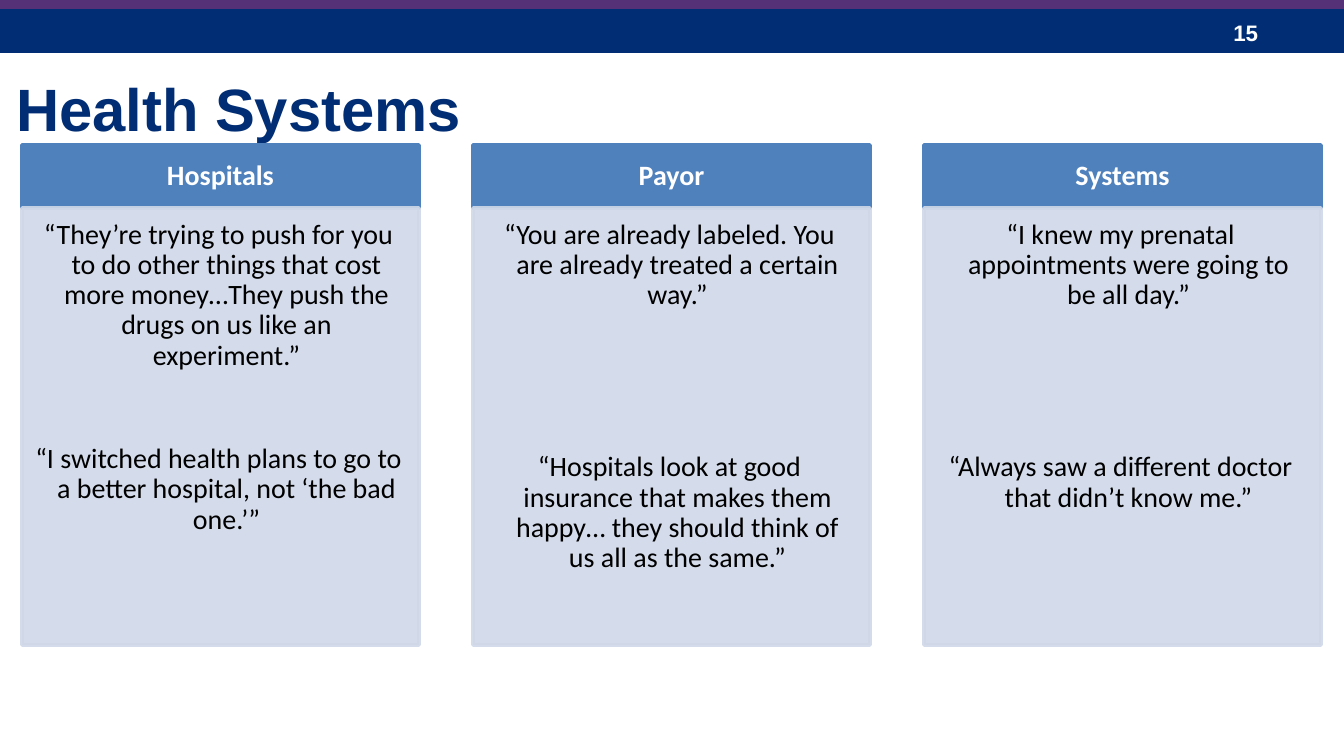
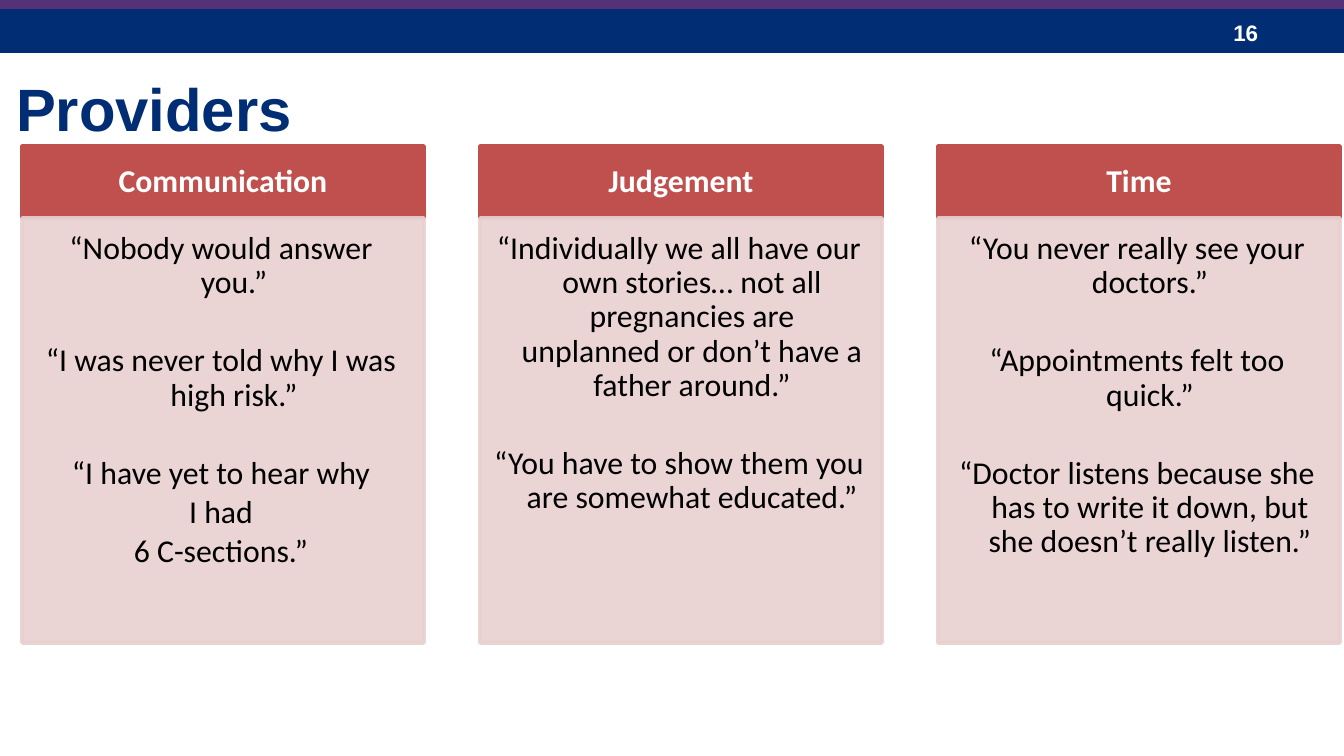
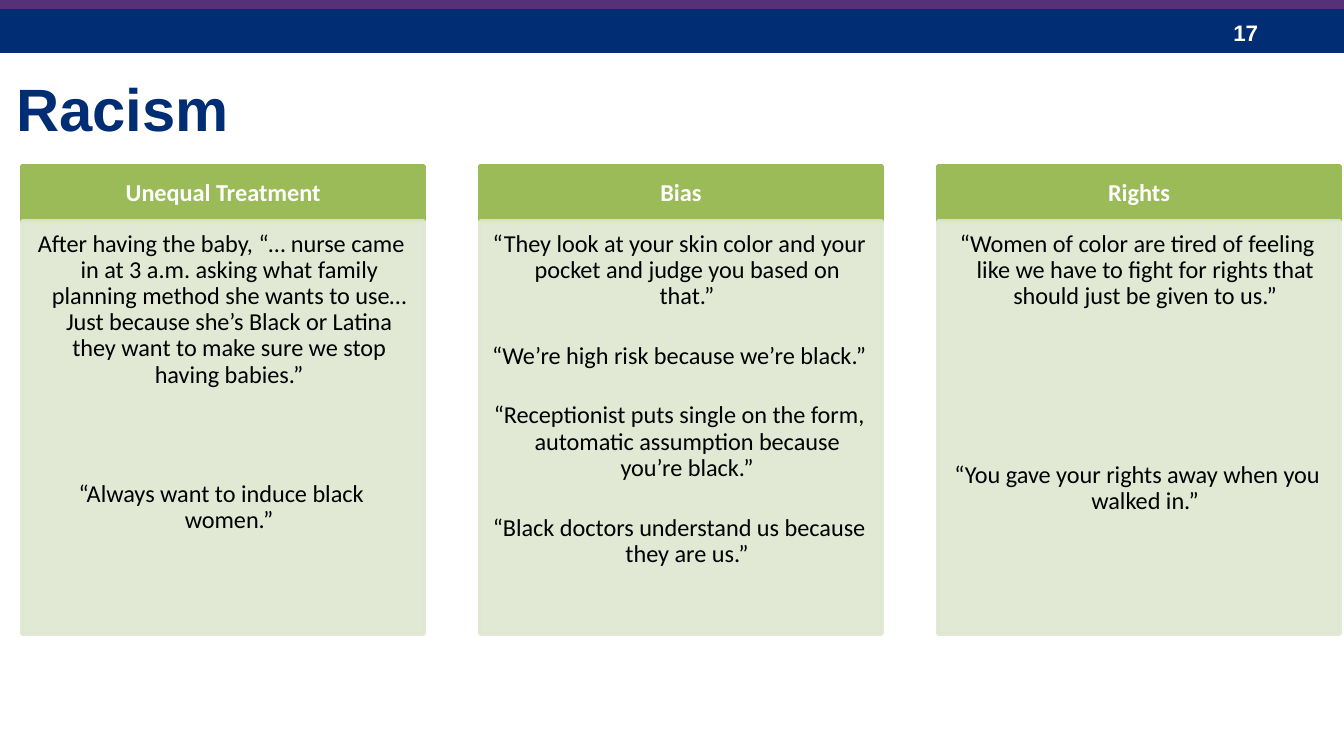
from dataclasses import dataclass

from lxml.etree import SubElement
from pptx import Presentation
from pptx.dml.color import RGBColor as RGB
from pptx.enum.shapes import MSO_SHAPE as SHAPE
from pptx.enum.text import MSO_ANCHOR as ANCHOR, MSO_AUTO_SIZE as AUTOSIZE, PP_ALIGN as ALIGN
from pptx.oxml.ns import qn
from pptx.util import Emu, Pt

PX = 914400 / 134.4


@dataclass(frozen=True)
class Theme:
    """Colours, fonts and type sizes shared by the slides."""
    navy: str = "002D73"
    purple: str = "553278"
    white: str = "FFFFFF"
    black: str = "000000"
    head_font: str = "Arial"
    body_font: str = "Calibri"
    title_size: int = 32
    number_size: int = 12
    outline: int = 2
    alpha: int = 90


@dataclass(frozen=True)
class Board:
    """Look and measures of one three-column board."""
    accent: str
    tint: str
    size: int
    top: int
    width: int
    pitch: int
    head_h: int
    body_h: int
    indent: int


T = Theme()
FIRST_NUMBER = 15
LEFT = 22

BLUE = Board("4F81BD", "D0D8E8", 15, 145, 397, 451, 63, 437, 16)
RED = Board("C0504D", "E8D0D0", 17, 146, 402, 458, 72, 425, 26)
GREEN = Board("9BBB59", "DEE7D1", 13, 166, 402, 458, 55, 413, 16)

SLIDES = [
    ("Health Systems", BLUE, [
        ("Hospitals", [
            (0, "“They’re trying to push for you to do other things that cost more money…"
                "They push the drugs on us like an experiment.”"),
            (2, "“I switched health plans to go to a better hospital, not ‘the bad one.’”")]),
        ("Payor", [
            (0, "“You are already labeled. You are already treated a certain way.”"),
            (4, "“Hospitals look at good insurance that makes them happy… "
                "they should think of us all as the same.”")]),
        ("Systems", [
            (0, "“I knew my prenatal appointments were going to be all day.”"),
            (4, "“Always saw a different doctor that didn’t know me.”")]),
    ]),
    ("Providers", RED, [
        ("Communication", [
            (0, "“Nobody would answer you.”"),
            (1, "“I was never told why I was high risk.”"),
            (1, "“I have yet to hear why"),
            (0, "I had"),
            (0, "6 C-sections.”")]),
        ("Judgement", [
            (0, "“Individually we all have our own stories… not all pregnancies are "
                "unplanned or don’t have a father around.”"),
            (1, "“You have to show them you are somewhat educated.”")]),
        ("Time", [
            (0, "“You never really see your doctors.”"),
            (1, "“Appointments felt too quick.”"),
            (1, "“Doctor listens because she has to write it down, "
                "but she doesn’t really listen.”")]),
    ]),
    ("Racism", GREEN, [
        ("Unequal Treatment", [
            (0, "After having the baby, “… nurse came in at 3 a.m. asking what family planning "
                "method she wants to use… Just because she’s Black or Latina they want to "
                "make sure we stop having babies.”"),
            (3, "“Always want to induce black women.”")]),
        ("Bias", [
            (0, "“They look at your skin color and your pocket and judge you based on that.”"),
            (1, "“We’re high risk because we’re black.”"),
            (1, "“Receptionist puts single on the form, automatic assumption "
                "because you’re black.”"),
            (1, "“Black doctors understand us because they are us.”")]),
        ("Rights", [
            (0, "“Women of color are tired of feeling like we have to fight for rights "
                "that should just be given to us.”"),
            (5, "“You gave your rights away when you walked in.”")]),
    ]),
]


def px(n):
    """Turn pixels into EMU."""
    return Emu(round(n * PX))


def style(p, font, size, color, bold=False):
    """Format every run of a paragraph."""
    for r in p.runs:
        r.font.name, r.font.size, r.font.bold = font, Pt(size), bold
        r.font.color.rgb = RGB.from_string(color)


def add_box(s, box, color, outlined=False, alpha=100):
    """Add a flat rectangle, with an outline of its own colour if asked."""
    sp = s.shapes.add_shape(SHAPE.RECTANGLE, *map(px, box))
    sp.shadow.inherit = False
    sp.fill.solid()
    sp.fill.fore_color.rgb = RGB.from_string(color)
    if outlined:
        sp.line.color.rgb = RGB.from_string(color)
        sp.line.width = Pt(T.outline)
    else:
        sp.line.fill.background()
    if alpha < 100:
        for clr in list(sp.element.iter(qn("a:srgbClr"))):
            SubElement(clr, qn("a:alpha")).set("val", str(alpha * 1000))
    return sp


def set_frame(tf, anchor, *insets):
    """Set wrapping, anchor and the left, top, right and bottom insets in px."""
    tf.word_wrap = True
    tf.vertical_anchor = anchor
    tf.margin_left, tf.margin_top, tf.margin_right, tf.margin_bottom = (
        px(round(n)) for n in insets)


def add_bands(s, number):
    """Add the top bands and the slide number."""
    add_box(s, (0, 9, 1344, 44), T.navy)
    add_box(s, (0, -3, 1344, 12), T.purple)
    tf = s.shapes.add_textbox(*map(px, (1220, 13, 101, 40))).text_frame
    tf.word_wrap = True
    tf.text = str(number)
    style(tf.paragraphs[0], T.head_font, T.number_size, T.white, True)


def set_title(s, text):
    """Place and format the title placeholder."""
    sp = s.shapes.title
    sp.left, sp.top, sp.width, sp.height = map(px, (3, 65, 1277, 86))
    tf = sp.text_frame
    tf.text = text
    tf.auto_size = AUTOSIZE.NONE
    set_frame(tf, ANCHOR.TOP, 13, 7, 13, 7)
    tf.paragraphs[0].alignment = ALIGN.LEFT
    style(tf.paragraphs[0], T.head_font, T.title_size, T.navy, True)


def add_heading(s, box, board, text):
    """Add the coloured heading of a column."""
    tf = add_box(s, box, board.accent, outlined=True).text_frame
    side, edge = 1.07 * board.size, 0.61 * board.size
    set_frame(tf, ANCHOR.MIDDLE, side, edge, side, edge)
    tf.text = text
    p = tf.paragraphs[0]
    p.alignment, p.line_spacing = ALIGN.CENTER, 0.9
    style(p, T.body_font, board.size, T.white, True)


def add_quotes(s, box, board, quotes):
    """Add the tinted panel of quotes, each set off by its number of lines."""
    size = board.size
    tf = add_box(s, box, board.tint, outlined=True, alpha=T.alpha).text_frame
    set_frame(tf, ANCHOR.TOP, 0.8 * size, 0.8 * size, 1.07 * size, 1.2 * size)
    tf.text = "\n".join(text for _, text in quotes)
    for p, (lines, _) in zip(tf.paragraphs, quotes):
        p.level, p.alignment, p.line_spacing = 1, ALIGN.CENTER, 0.9
        p.space_after = Pt(0.15 * size)
        if lines:
            p.space_before = Pt(1.23 * size * lines)
        ppr = p._p.get_or_add_pPr()
        ppr.set("marL", str(px(board.indent)))
        ppr.set("indent", str(-px(board.indent)))
        style(p, T.body_font, size, T.black)


def add_board(s, board, columns):
    """Add the columns, evenly spaced from the left edge."""
    for i, (heading, quotes) in enumerate(columns):
        x = LEFT + i * board.pitch
        add_heading(s, (x, board.top, board.width, board.head_h), board, heading)
        add_quotes(s, (x, board.top + board.head_h, board.width, board.body_h), board, quotes)


def main():
    """Build and save the slides."""
    prs = Presentation()
    prs.slide_width, prs.slide_height = px(1344), px(756)
    for number, (title, board, columns) in enumerate(SLIDES, FIRST_NUMBER):
        s = prs.slides.add_slide(prs.slide_layouts[5])
        add_bands(s, number)
        set_title(s, title)
        add_board(s, board, columns)
    prs.save("out.pptx")


if __name__ == "__main__":
    main()
